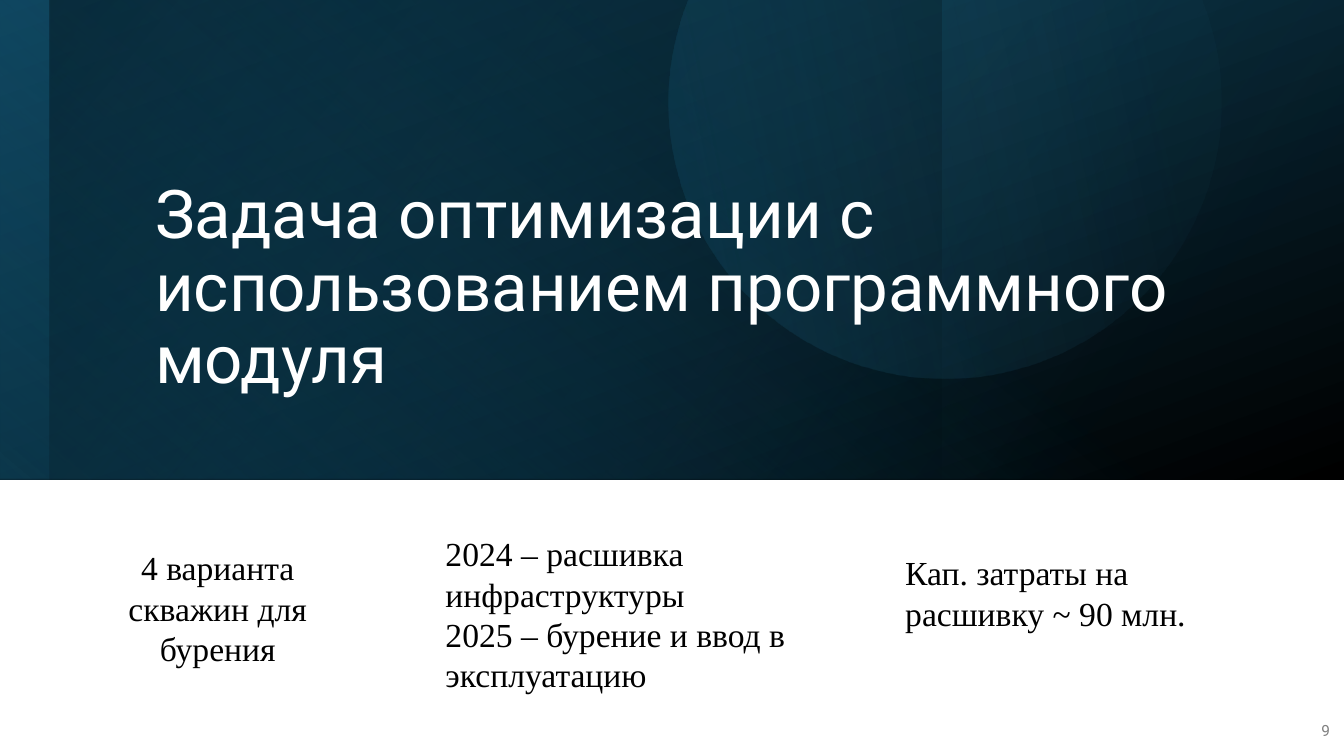
"""Build the section slide on optimisation with a software module."""
import math

import pptx
import pptx.dml.color
import pptx.enum.shapes
import pptx.enum.text
import pptx.oxml
import pptx.oxml.ns
import pptx.util

Inches = pptx.util.Inches
ALIGN = pptx.enum.text.PP_ALIGN
ANCHOR = pptx.enum.text.MSO_ANCHOR
BODY_FONT = "Times New Roman"


def color(value):
    """Return the colour for a hex string."""
    return pptx.dml.color.RGBColor.from_string(value)


def set_values(target, values):
    """Set each named attribute of the target."""
    for name, value in values.items():
        setattr(target, name, value)


def fill_gradient(shape, stops, angle):
    """Fill with (position, colour, opacity) stops at a clockwise angle."""
    shape.shadow.inherit = False
    shape.line.fill.background()
    shape.fill.gradient()
    shape.fill.gradient_angle = (360 - angle) % 360
    for stop, (position, value, _) in zip(shape.fill.gradient_stops, stops):
        stop.position = position / 100
        stop.color.rgb = color(value)
    nodes = shape._element.xpath("./p:spPr/a:gradFill//a:srgbClr")
    for node, (_, _, opacity) in zip(nodes, stops):
        alpha = pptx.oxml.parse_xml(f'<a:alpha {pptx.oxml.ns.nsdecls("a")} val="{opacity * 1000}"/>')
        node.append(alpha)


def add_panel(slide, box, rotation, stops, angle):
    """Add a rectangle with a gradient."""
    kind = pptx.enum.shapes.MSO_SHAPE.RECTANGLE
    shape = slide.shapes.add_shape(kind, *map(Inches, box))
    shape.rotation = rotation
    fill_gradient(shape, stops, angle)


def add_cut_circle(slide, center, radius, stops, angle):
    """Add a circle cut off by the top edge of the slide."""
    left, top = center
    start = -math.degrees(math.asin(top / radius))
    steps = 90
    angles = [math.radians(start + (180 - 2 * start) * step / steps) for step in range(steps + 1)]
    points = [(Inches(left + radius * math.cos(turn)), Inches(top + radius * math.sin(turn)))
              for turn in angles]
    builder = slide.shapes.build_freeform(*points[0])
    builder.add_line_segments(points[1:], close=True)
    fill_gradient(builder.convert_to_shape(), stops, angle)


def add_text(slide, box, lines, font, paragraph_format=None, anchor=ANCHOR.TOP):
    """Add a wrapping text box with one paragraph per line."""
    frame = slide.shapes.add_textbox(*map(Inches, box)).text_frame
    set_values(frame, {"word_wrap": True, "vertical_anchor": anchor})
    frame.text = "\n".join(lines)
    name, size, value = font
    for paragraph in frame.paragraphs:
        set_values(paragraph, paragraph_format or {})
        for run in paragraph.runs:
            set_values(run.font, {"name": name, "size": pptx.util.Pt(size)})
            run.font.color.rgb = color(value)


def main():
    """Build and save the slide."""
    presentation = pptx.Presentation()
    set_values(presentation, {"slide_width": Inches(13.33), "slide_height": Inches(7.5)})
    slide = presentation.slides.add_slide(presentation.slide_layouts[6])

    panels = [
        ((0, -0.02, 13.33, 4.78), 180, [(0, "104862", 100), (100, "000000", 100)], 250),
        ((4.27, -4.3, 4.78, 13.33), 90, [(40, "156082", 0), (100, "104862", 52)], 40),
        ((4.52, -4.05, 4.78, 12.84), 90, [(17, "156082", 0), (100, "000000", 37)], 130),
        ((0, -0.02, 9.34, 4.78), 0, [(0, "0B3041", 0), (100, "000000", 25)], 310),
    ]
    for panel in panels:
        add_panel(slide, *panel)
    add_cut_circle(slide, (9.37, 1.02), 2.74, [(0, "156082", 22), (87, "46B1E1", 2)], 348.5)

    add_text(slide, (1.44, 0.8, 10.99, 3.2),
             ["Задача оптимизации с использованием программного модуля"],
             ("Roboto", 48, "FFFFFF"), {"line_spacing": 0.9}, ANCHOR.BOTTOM)
    add_text(slide, (12.8, 7.05, 0.49, 0.4), ["9"], ("Roboto", 11, "808080"),
             {"alignment": ALIGN.RIGHT, "space_after": pptx.util.Pt(6)}, ANCHOR.MIDDLE)

    notes = [
        ((0.91, 5.38, 2.5, 1.72), ["4 варианта скважин для бурения"], ALIGN.CENTER),
        ((4.32, 5.24, 4.12, 1.72),
         ["2024 – расшивка инфраструктуры", "2025 – бурение и ввод в эксплуатацию"], ALIGN.LEFT),
        ((8.88, 5.43, 3.47, 0.91), ["Кап. затраты на расшивку ~ 90 млн."], ALIGN.LEFT),
    ]
    for box, lines, alignment in notes:
        add_text(slide, box, lines, (BODY_FONT, 24, "000000"), {"alignment": alignment})

    presentation.save("out.pptx")


if __name__ == "__main__":
    main()
